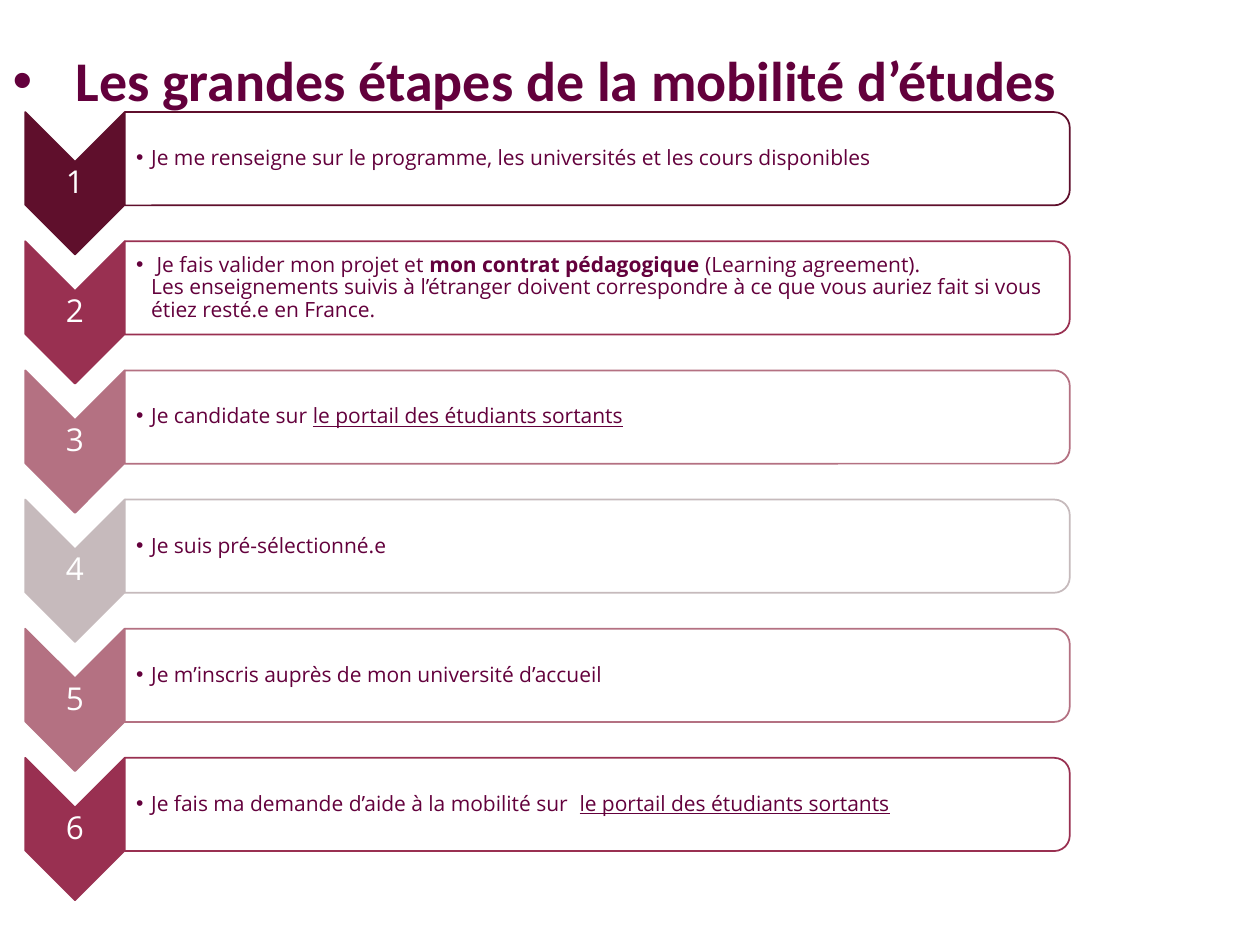
"""Build the slide listing the six steps of a study mobility."""
from lxml.etree import SubElement
from pptx import Presentation
from pptx.dml.color import RGBColor
from pptx.enum.shapes import MSO_SHAPE as Shape
from pptx.enum.text import MSO_ANCHOR as Anchor, MSO_AUTO_SIZE as AutoSize, PP_ALIGN as Align
from pptx.oxml.ns import qn
from pptx.util import Inches, Pt

TITLE = "Les grandes étapes de la mobilité d’études"
PORTAL = ("le portail des étudiants sortants", "underline")
STEPS = [
    ("5F0F2C", [("Je me renseigne sur le programme, les universités et les cours disponibles", "")]),
    ("993051", [
        (" Je fais valider mon projet et ", ""),
        ("mon contrat pédagogique ", "bold"),
        ("(Learning agreement).", ""),
        ("", "break"),
        ("Les enseignements suivis à l’étranger doivent correspondre à ce que vous "
         "auriez fait si vous étiez resté.e en France.", ""),
    ]),
    ("B47182", [("Je candidate sur ", ""), PORTAL]),
    ("C6BABC", [("Je suis pré-sélectionné.e", "")]),
    ("B47182", [("Je m’inscris auprès de mon université d’accueil", "")]),
    ("993051", [("Je fais ma demande d’aide à la mobilité sur  ", ""), PORTAL]),
]
PLUM, WHITE = "63003C", "FFFFFF"
FIRST_CENTER, PITCH = 1.26, 1.025
CHEVRON_X, CHEVRON_DROP, CHEVRON_LENGTH, CHEVRON_WIDTH = 0.595, 0.195, 1.13, 0.79
BAR_LEFT, BAR_WIDTH, BAR_HEIGHT = 0.99, 7.5, 0.74
TEXT_WIDTH, TEXT_HEIGHT = 7.46, 0.66
NUMBER_HEIGHT = 0.34


def color(value):
    return RGBColor.from_string(value)


def style(span, name, size, value):
    span.font.name, span.font.size = name, Pt(size)
    span.font.color.rgb = color(value)


def add_bullet(para, indent):
    props = para._p.get_or_add_pPr()
    props.set("marL", str(Inches(indent)))
    props.set("indent", str(-Inches(indent)))
    SubElement(props, qn("a:buFont"), typeface="Arial")
    SubElement(props, qn("a:buChar"), char="•")


def add_turned_shape(page, kind, center_x, center_y, length, width, fill, line):
    shape = page.shapes.add_shape(
        kind, Inches(center_x - length / 2), Inches(center_y - width / 2),
        Inches(length), Inches(width))
    shape.rotation = 90
    shape.shadow.inherit = False
    shape.fill.solid()
    shape.fill.fore_color.rgb = color(fill)
    shape.line.color.rgb = color(line)
    shape.line.width = Pt(1)


def add_text_box(page, left, center_y, width, height, margin_left):
    box = page.shapes.add_textbox(
        Inches(left), Inches(center_y - height / 2), Inches(width), Inches(height))
    frame = box.text_frame
    frame.word_wrap = True
    frame.vertical_anchor = Anchor.MIDDLE
    frame.margin_left = Inches(margin_left)
    frame.margin_right = frame.margin_top = frame.margin_bottom = Inches(0.01)
    para = frame.paragraphs[0]
    para.line_spacing = 0.9
    return para


def add_title(page):
    box = page.shapes.title
    box.left, box.top, box.width, box.height = map(Inches, (0, 0.36, 9.57, 0.59))
    frame = box.text_frame
    frame.text = TITLE
    frame.word_wrap = True
    frame.auto_size = AutoSize.SHAPE_TO_FIT_TEXT
    frame.vertical_anchor = Anchor.BOTTOM
    para = frame.paragraphs[0]
    para.alignment = Align.LEFT
    para.line_spacing = 0.9
    add_bullet(para, 0.5)
    style(para.runs[0], "Calibri", 32, PLUM)
    para.runs[0].font.bold = True


def add_step(page, number, tint, spans):
    center = FIRST_CENTER + (number - 1) * PITCH
    chevron_center = center + CHEVRON_DROP
    add_turned_shape(page, Shape.CHEVRON, CHEVRON_X, chevron_center,
                     CHEVRON_LENGTH, CHEVRON_WIDTH, tint, tint)
    para = add_text_box(page, CHEVRON_X - CHEVRON_WIDTH / 2, chevron_center,
                        CHEVRON_WIDTH, NUMBER_HEIGHT, 0.01)
    para.text = str(number)
    para.alignment = Align.CENTER
    style(para.runs[0], "Open Sans", 18, WHITE)

    add_turned_shape(page, Shape.ROUND_2_SAME_RECTANGLE, BAR_LEFT + BAR_WIDTH / 2, center,
                     BAR_HEIGHT, BAR_WIDTH, WHITE, tint)
    para = add_text_box(page, BAR_LEFT, center, TEXT_WIDTH, TEXT_HEIGHT, 0.09)
    para.level = 1
    add_bullet(para, 0.12)
    for text, look in spans:
        if look == "break":
            para.add_line_break()
            SubElement(para._p[-1], qn("a:rPr"), sz="1200")
            continue
        span = para.add_run()
        span.text = text
        style(span, "Open Sans", 12, PLUM)
        span.font.bold = look == "bold"
        span.font.underline = look == "underline"


def main():
    deck = Presentation()
    deck.slide_width, deck.slide_height = Inches(10), Inches(7.5)
    page = deck.slides.add_slide(deck.slide_layouts[0])
    subtitle = page.placeholders[1].element
    subtitle.getparent().remove(subtitle)
    add_title(page)
    for number, (tint, spans) in enumerate(STEPS, 1):
        add_step(page, number, tint, spans)
    deck.save("out.pptx")


if __name__ == "__main__":
    main()
